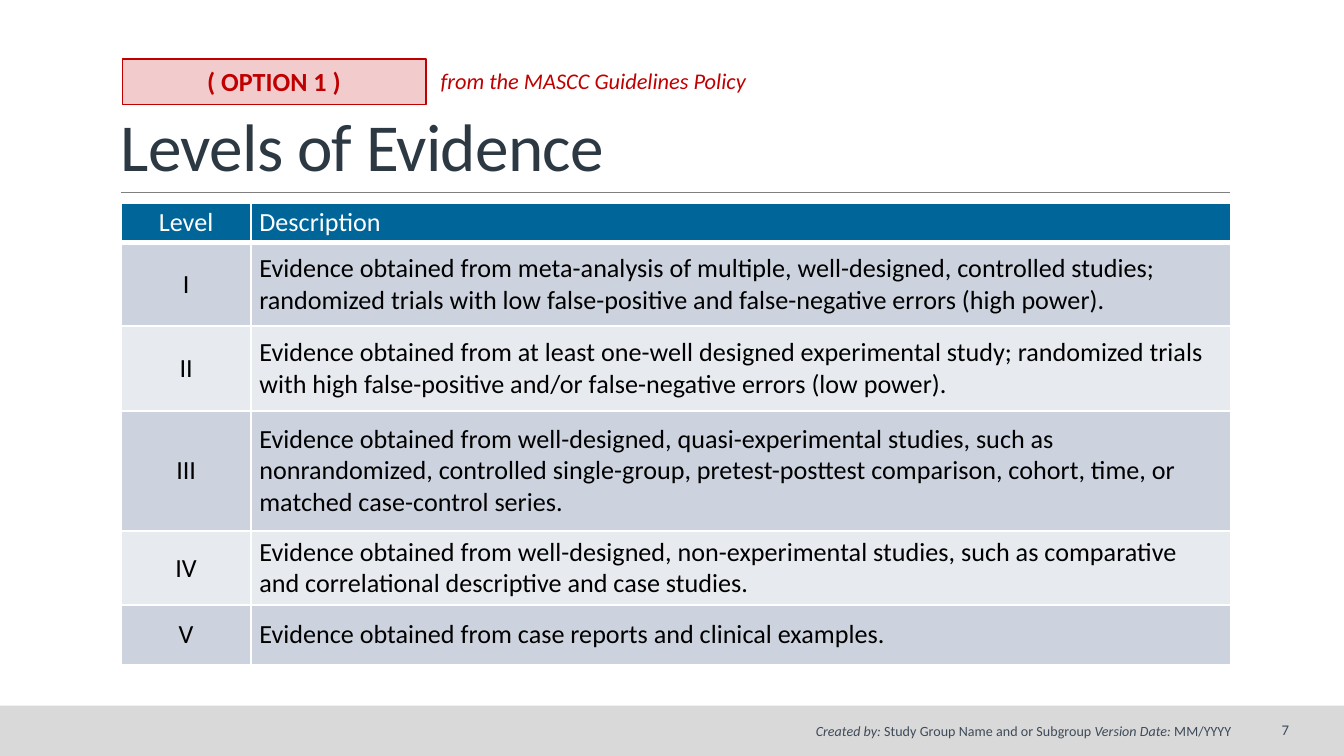
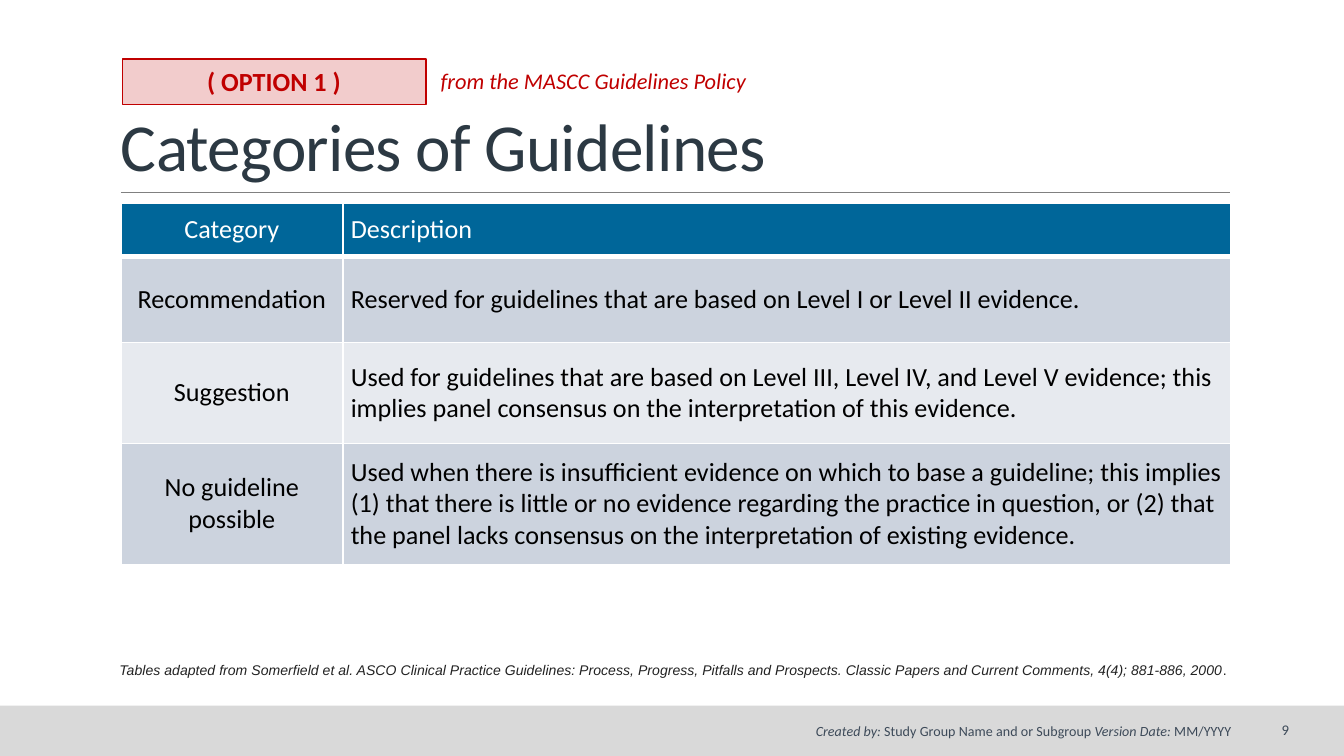
from lxml import etree
from pptx import Presentation
from pptx.dml.color import RGBColor
from pptx.enum.shapes import MSO_CONNECTOR, MSO_SHAPE
from pptx.enum.text import MSO_ANCHOR as Anchor, MSO_AUTO_SIZE, PP_ALIGN as Align
from pptx.oxml.ns import qn
from pptx.util import Inches, Pt

# Colours
WHITE = RGBColor(0xFF, 0xFF, 0xFF)
BLACK = RGBColor(0x00, 0x00, 0x00)
TITLE_INK = RGBColor(0x2C, 0x39, 0x43)
FOOTER_INK = RGBColor(0x3D, 0x4A, 0x59)
SOURCE_INK = RGBColor(0x22, 0x22, 0x22)
RED = RGBColor(0xC0, 0x00, 0x00)
RULE_GREY = RGBColor(0x80, 0x80, 0x80)
BAND_GREY = RGBColor(0xD9, 0xD9, 0xD9)
HEADER_BLUE = RGBColor(0x00, 0x66, 0x99)
STRIPES = (RGBColor(0xCC, 0xD3, 0xDE), RGBColor(0xE7, 0xEA, 0xEF))

# Grid
COLUMNS, ROWS = 100, 75
LEFT, RIGHT = 9, 91.5

# Content
LEVELS = [
    ("Level", "Description"),
    ("I", "Evidence obtained from meta-analysis of multiple, well-designed, controlled studies; "
          "randomized trials with low false-positive and false-negative errors (high power)."),
    ("II", "Evidence obtained from at least one-well designed experimental study; randomized "
           "trials with high false-positive and/or false-negative errors (low power)."),
    ("III", "Evidence obtained from well-designed, quasi-experimental studies, such as "
            "nonrandomized, controlled single-group, pretest-posttest comparison, cohort, time, "
            "or matched case-control series."),
    ("IV", "Evidence obtained from well-designed, non-experimental studies, such as comparative "
           "and correlational descriptive and case studies."),
    ("V", "Evidence obtained from case reports and clinical examples."),
]
CATEGORIES = [
    ("Category", "Description"),
    ("Recommendation", "Reserved for guidelines that are based on Level I or Level II evidence."),
    ("Suggestion", "Used for guidelines that are based on Level III, Level IV, and Level V "
                   "evidence; this implies panel consensus on the interpretation of this evidence."),
    ("No guideline possible",
     "Used when there is insufficient evidence on which to base a guideline; this implies (1) "
     "that there is little or no evidence regarding the practice in question, or (2) that the "
     "panel lacks consensus on the interpretation of existing evidence."),
]
FOOTER = [("Created by: ", True), ("Study Group Name and or Subgroup ", False),
          ("Version Date: ", True), ("MM/YYYY", False)]
SOURCE = [("Tables adapted from Somerfield et al. ASCO Clinical Practice Guidelines: Process, "
           "Progress, Pitfalls and Prospects. Classic Papers and Current Comments, 4(4); "
           "881-886, 2000", True), (".", False)]


def write(frame, text, size=14, color=BLACK, font="Calibri", bold=False, italic=False,
          align=Align.LEFT, anchor=Anchor.TOP, line_spacing=None, tracking=None):
    """Fill a frame with one paragraph; text is a string or (text, italic) pairs."""
    frame.word_wrap = True
    frame.vertical_anchor = anchor
    paragraph = frame.paragraphs[0]
    paragraph.alignment = align
    if line_spacing:
        paragraph.line_spacing = line_spacing
    for words, slanted in [(text, italic)] if isinstance(text, str) else text:
        run = paragraph.add_run()
        run.text = words
        run.font.name, run.font.size = font, Pt(size)
        run.font.bold, run.font.italic = bold, slanted
        run.font.color.rgb = color
        if tracking:
            run.font._element.set("spc", str(int(tracking * 100)))


def set_borders(cell, top, bottom):
    """Give a cell white borders; the sides are one point wide."""
    properties = cell._tc.get_or_add_tcPr()
    widths = (("lnL", 1), ("lnR", 1), ("lnT", top), ("lnB", bottom))
    for place, (side, width) in enumerate(widths):
        line = etree.Element(qn(f"a:{side}"), w=str(Pt(width)))
        fill = etree.SubElement(line, qn("a:solidFill"))
        etree.SubElement(fill, qn("a:srgbClr"), val=str(WHITE))
        properties.insert(place, line)


class Deck:
    """Holds the shared style and the current slide."""

    def __init__(self):
        self.presentation = Presentation()
        self.presentation.slide_width = Inches(10)
        self.presentation.slide_height = Inches(5.625)
        self.slide = None

    def x(self, columns):
        return round(self.presentation.slide_width * columns / COLUMNS)

    def y(self, rows):
        return round(self.presentation.slide_height * rows / ROWS)

    def box(self, left, top, width, height):
        return self.x(left), self.y(top), self.x(width), self.y(height)

    def text(self, left, top, width, height, text, **style):
        shape = self.slide.shapes.add_textbox(*self.box(left, top, width, height))
        write(shape.text_frame, text, **style)

    def rectangle(self, left, top, width, height, fill, line=None, opacity=None):
        shape = self.slide.shapes.add_shape(MSO_SHAPE.RECTANGLE,
                                            *self.box(left, top, width, height))
        shape.shadow.inherit = False
        shape.fill.solid()
        shape.fill.fore_color.rgb = fill
        if opacity:
            color = shape._element.spPr.find(qn("a:solidFill")).find(qn("a:srgbClr"))
            etree.SubElement(color, qn("a:alpha"), val=str(opacity * 1000))
        if line:
            shape.line.color.rgb = line
            shape.line.width = Pt(0.75)
        else:
            shape.line.fill.background()
        return shape

    def rule(self, row):
        line = self.slide.shapes.add_connector(MSO_CONNECTOR.STRAIGHT, self.x(LEFT), self.y(row),
                                               self.x(RIGHT), self.y(row))
        line.line.color.rgb = RULE_GREY
        line.line.width = Pt(0.5)
        etree.SubElement(line._element.spPr, qn("a:effectLst"))

    def title(self, text):
        shape = self.slide.shapes.title
        shape.left, shape.top, shape.width, shape.height = self.box(LEFT, 3.2, RIGHT - LEFT, 15.87)
        frame = shape.text_frame
        frame.auto_size = MSO_AUTO_SIZE.NONE
        frame.margin_left = frame.margin_right = 0
        frame.margin_top = frame.margin_bottom = Inches(0.05)
        write(frame, text, size=36, color=TITLE_INK, anchor=Anchor.BOTTOM,
              line_spacing=0.85, tracking=-0.4)

    def start_slide(self, title, number):
        """Add a slide with its band, rule, title, option tag and footer."""
        self.slide = self.presentation.slides.add_slide(self.presentation.slide_layouts[5])
        self.rectangle(0, 70, COLUMNS, 5, BAND_GREY)
        self.rule(19.07)
        self.title(title)
        tag = self.rectangle(9.1, 5.87, 22.6, 4.5, RED, line=RED, opacity=20)
        write(tag.text_frame, "( OPTION 1 )", color=RED, bold=True, align=Align.CENTER)
        self.text(31.8, 6, 28.7, 4, "from the MASCC Guidelines Policy",
                  size=12, color=RED, italic=True)
        self.text(43.3, 71.07, 49.3, 4, FOOTER, size=7.5, color=FOOTER_INK, align=Align.RIGHT)
        self.text(90.6, 70.4, 6.3, 4, number, size=7.9, color=FOOTER_INK,
                  align=Align.RIGHT, anchor=Anchor.MIDDLE)

    def table(self, records, widths, heights):
        table = self.slide.shapes.add_table(
            len(records), len(widths), *self.box(LEFT, 20.13, sum(widths), sum(heights))).table
        for column, width in zip(table.columns, widths):
            column.width = self.x(width)
        for index, (record, height) in enumerate(zip(records, heights)):
            table.rows[index].height = self.y(height)
            header = index == 0
            for place, words in enumerate(record):
                cell = table.cell(index, place)
                cell.margin_left = cell.margin_right = Inches(0.06)
                cell.margin_top = cell.margin_bottom = Inches(0.03)
                cell.vertical_anchor = Anchor.MIDDLE
                cell.fill.solid()
                cell.fill.fore_color.rgb = HEADER_BLUE if header else STRIPES[(index - 1) % 2]
                set_borders(cell, top=3 if index == 1 else 1, bottom=3 if header else 1)
                write(cell.text_frame, words, color=WHITE if header else BLACK,
                      align=Align.LEFT if place else Align.CENTER, anchor=Anchor.MIDDLE)


def main():
    deck = Deck()

    # Levels of evidence
    deck.start_slide("Levels of Evidence", "7")
    deck.table(LEVELS, widths=(9.7, 72.9), heights=(3.88, 8.32, 8.4, 11.92, 7.36, 5.9))

    # Categories of guidelines
    deck.start_slide("Categories of Guidelines", "9")
    deck.table(CATEGORIES, widths=(16.5, 66.1), heights=(5.33, 8.53, 10, 12))
    deck.text(7.9, 64.93, 86.9, 3.07, SOURCE, size=7.5, color=SOURCE_INK, font="Arial")

    deck.presentation.save("out.pptx")


if __name__ == "__main__":
    main()
